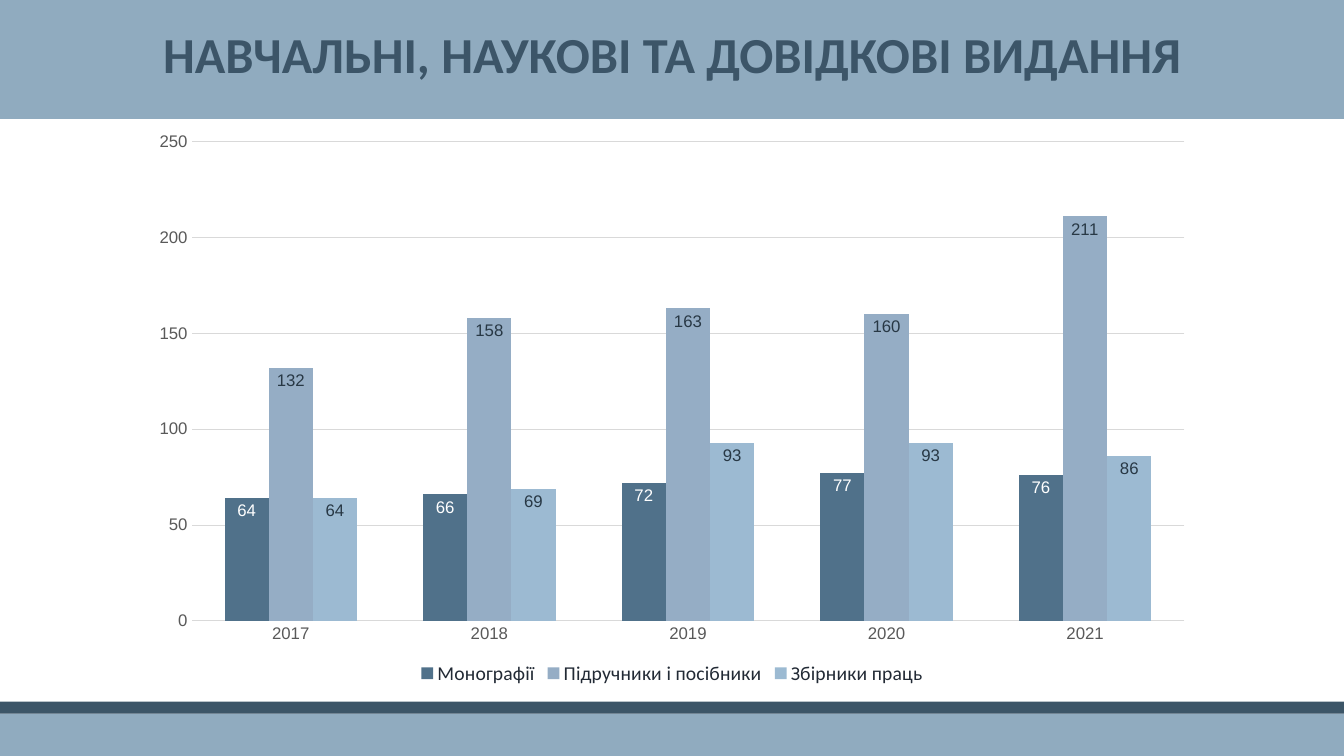
from lxml import etree
from pptx import Presentation
from pptx.chart.data import CategoryChartData
from pptx.dml.color import RGBColor
from pptx.enum.chart import XL_CHART_TYPE as ChartType
from pptx.enum.chart import XL_LABEL_POSITION as LabelPosition
from pptx.enum.chart import XL_LEGEND_POSITION as LegendPosition
from pptx.enum.chart import XL_TICK_MARK as TickMark
from pptx.enum.shapes import MSO_SHAPE as ShapeType
from pptx.enum.text import MSO_ANCHOR as Anchor
from pptx.enum.text import PP_ALIGN as Align
from pptx.oxml.ns import qn
from pptx.util import Inches, Pt

COLORS = {
    "band": "90ABBF",
    "stripe": "3C5567",
    "title": "3C5568",
    "axis": "595959",
    "grid": "D9D9D9",
    "legend": "222A35",
    "light_label": "FFFFFF",
    "dark_label": "283845",
    "monographs": "50718A",
    "textbooks": "95ADC5",
    "collections": "9CBAD2",
}
YEARS = ["2017", "2018", "2019", "2020", "2021"]
# name, values, bar colour, label colour
SERIES = [
    ("Монографії", (64, 66, 72, 77, 76), "monographs", "light_label"),
    ("Підручники і посібники", (132, 158, 163, 160, 211), "textbooks", "dark_label"),
    ("Збірники праць", (64, 69, 93, 93, 86), "collections", "dark_label"),
]
BANDS = [(0, 1.18, "band"), (7.08, 0.42, "band"), (6.96, 0.12, "stripe")]
PLOT_AREA = {"x": 0.05, "y": 0.04, "w": 0.93, "h": 0.84}


def rgb(name):
    return RGBColor.from_string(COLORS[name])


def set_font(font, color, **settings):
    for name, value in settings.items():
        setattr(font, name, value)
    font.color.rgb = rgb(color)


def add_band(slide, top, height, color):
    """Add a bar across the full slide width."""
    shape = slide.shapes.add_shape(
        ShapeType.RECTANGLE, 0, Inches(top), Inches(13.33), Inches(height))
    shape.shadow.inherit = False
    shape.fill.solid()
    shape.fill.fore_color.rgb = rgb(color)
    shape.line.fill.background()


def add_title(slide, text):
    box = slide.shapes.add_textbox(
        Inches(1.27), Inches(0.24), Inches(10.8), Inches(0.65))
    frame = box.text_frame
    frame.word_wrap = True
    frame.vertical_anchor = Anchor.MIDDLE
    paragraph = frame.paragraphs[0]
    paragraph.alignment = Align.CENTER
    paragraph.line_spacing = 0.9
    run = paragraph.add_run()
    run.text = text
    set_font(run.font, "title", name="Calibri", size=Pt(36), bold=True)


def place_plot(chart):
    """Fix the inner plot area as fractions of the chart frame."""
    plot_area = chart.plots[0]._element.getparent()
    layout = plot_area.find(qn("c:layout"))
    if layout is None:
        layout = etree.Element(qn("c:layout"))
        plot_area.insert(0, layout)
    manual = etree.SubElement(layout, qn("c:manualLayout"))
    settings = {"layoutTarget": "inner", "xMode": "edge", "yMode": "edge", **PLOT_AREA}
    for name, value in settings.items():
        etree.SubElement(manual, qn(f"c:{name}")).set("val", str(value))


def style_axes(chart):
    for axis in (chart.category_axis, chart.value_axis):
        axis.major_tick_mark = axis.minor_tick_mark = TickMark.NONE
        axis.format.line.fill.background()
        set_font(axis.tick_labels.font, "axis", name="Arial", size=Pt(12))
    value_axis = chart.value_axis
    value_axis.minimum_scale = 0
    value_axis.maximum_scale = 250
    value_axis.major_unit = 50
    grid_line = value_axis.major_gridlines.format.line
    grid_line.color.rgb = rgb("grid")
    grid_line.width = Pt(0.75)


def style_series(series, color, label_color):
    series.format.fill.solid()
    series.format.fill.fore_color.rgb = rgb(color)
    labels = series.data_labels
    labels.show_value = True
    labels.position = LabelPosition.INSIDE_END
    set_font(labels.font, label_color, name="Arial", size=Pt(12))


def add_publications_chart(slide):
    data = CategoryChartData()
    data.categories = YEARS
    for name, values, _, _ in SERIES:
        data.add_series(name, values)
    chart = slide.shapes.add_chart(
        ChartType.COLUMN_CLUSTERED, Inches(1.37), Inches(1.18),
        Inches(10.59), Inches(5.66), data).chart
    chart.has_title = False
    chart.font.name = "Arial"
    chart.font.size = Pt(10)
    plot = chart.plots[0]
    plot.gap_width = 150
    plot.overlap = 0
    plot.vary_by_categories = False
    for series, (_, _, color, label_color) in zip(plot.series, SERIES):
        style_series(series, color, label_color)
    style_axes(chart)
    place_plot(chart)
    chart.has_legend = True
    chart.legend.position = LegendPosition.BOTTOM
    chart.legend.include_in_layout = False
    set_font(chart.legend.font, "legend", name="Calibri", size=Pt(14))


def main():
    presentation = Presentation()
    presentation.slide_width = Inches(13.33)
    presentation.slide_height = Inches(7.5)
    slide = presentation.slides.add_slide(presentation.slide_layouts[6])
    add_publications_chart(slide)
    for top, height, color in BANDS:
        add_band(slide, top, height, color)
    add_title(slide, "НАВЧАЛЬНІ, НАУКОВІ ТА ДОВІДКОВІ ВИДАННЯ")
    presentation.save("out.pptx")


if __name__ == "__main__":
    main()
